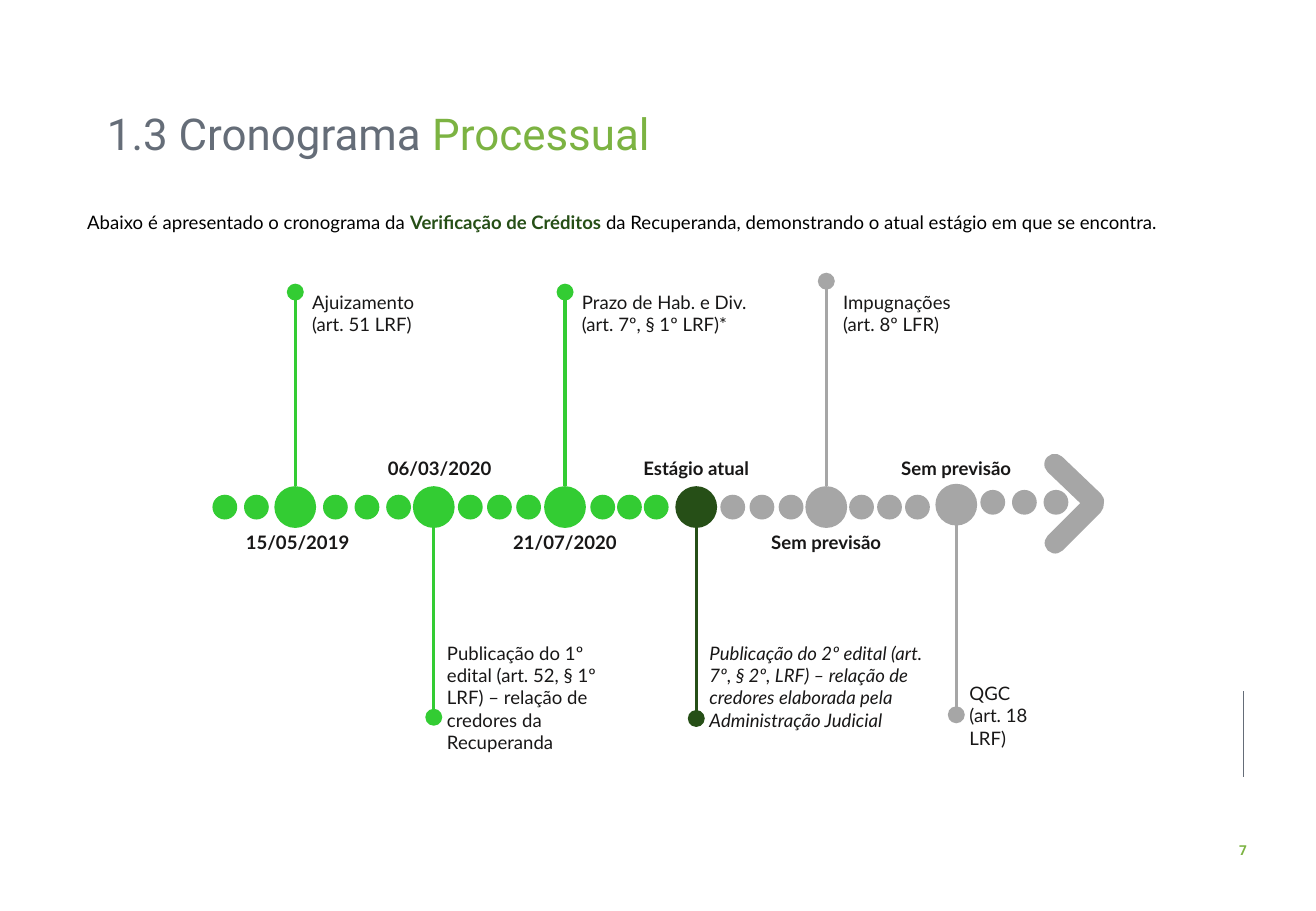
from dataclasses import dataclass

from lxml.etree import SubElement
from pptx import Presentation
from pptx.dml.color import RGBColor
from pptx.enum.shapes import MSO_CONNECTOR, MSO_SHAPE
from pptx.enum.text import MSO_ANCHOR, MSO_AUTO_SIZE, PP_ALIGN
from pptx.oxml.ns import qn
from pptx.util import Inches, Pt


@dataclass(frozen=True)
class Theme:
    slate: str = "656D78"
    lime: str = "7CB342"
    done: str = "33CC33"
    current: str = "264F17"
    pending: str = "A6A6A6"
    ink: str = "181717"
    black: str = "000000"
    heading_font: str = "Roboto"
    body_font: str = "Lato"
    title_size: float = 26
    body_size: float = 11
    number_size: float = 8.1


THEME = Theme()


@dataclass(frozen=True)
class Box:
    left: float
    top: float
    width: float
    height: float

    def lengths(self):
        return [Inches(n) for n in (self.left, self.top, self.width, self.height)]


@dataclass(frozen=True)
class Milestone:
    """Positions are inches from the left end and from the axis of the timeline."""
    x: float
    color: str
    date: str
    label: tuple
    tip: float
    label_top: float
    label_width: float
    date_shift: float = 0
    rise: float = 0
    italic: bool = False


MILESTONES = (
    Milestone(0.68, THEME.done, "15/05/2019", ("Ajuizamento (art. 51 LRF)",),
              -1.77, -1.83, 1.12, date_shift=0.02),
    Milestone(1.82, THEME.done, "06/03/2020",
              ("Publicação do 1º edital (art. 52, § 1º LRF) – relação de credores da Recuperanda",),
              1.73, 1.06, 1.68, date_shift=0.05),
    Milestone(2.9, THEME.done, "21/07/2020", ("Prazo de Hab. e Div. (art. 7º, § 1º LRF)*",),
              -1.77, -1.83, 1.62),
    Milestone(3.98, THEME.current, "Estágio atual",
              ("Publicação do 2º edital (art. 7º, § 2º, LRF) – relação de credores "
               "elaborada pela Administração Judicial",),
              1.74, 1.06, 1.99, italic=True),
    Milestone(5.05, THEME.pending, "Sem previsão", ("Impugnações (art. 8º LFR)",),
              -1.86, -1.83, 1.26),
    Milestone(6.12, THEME.pending, "Sem previsão", ("QGC", "(art. 18 LRF)"),
              1.71, 1.39, 0.93, rise=0.02),
)

# First dot centre, pitch, rise above the axis and colour; three dots unless counted
DOT_RUNS = (
    (0.1, 0.26, 0, THEME.done, 2),
    (1.01, 0.26, 0, THEME.done, 3),
    (2.12, 0.24, 0, THEME.done, 3),
    (3.21, 0.22, 0, THEME.done, 3),
    (4.28, 0.24, 0, THEME.pending, 3),
    (5.34, 0.23, 0, THEME.pending, 3),
    (6.42, 0.26, 0.04, THEME.pending, 3),
)


def add_span(para, text, color, size=THEME.body_size, font=THEME.body_font,
             bold=False, italic=False):
    span = para.add_run()
    span.text = text
    span.font.name = font
    span.font.size = Pt(size)
    span.font.bold = bold
    span.font.italic = italic
    span.font.color.rgb = RGBColor.from_string(color)


def add_frame(slide, box):
    frame = slide.shapes.add_textbox(*box.lengths()).text_frame
    frame.word_wrap = True
    return frame


def add_line(slide, start, end, color, width, ball=False):
    """Draw a straight line, with a round ball at its end if asked."""
    points = [Inches(n) for n in (*start, *end)]
    line = slide.shapes.add_connector(MSO_CONNECTOR.STRAIGHT, *points)
    line.line.color.rgb = RGBColor.from_string(color)
    line.line.width = Pt(width)
    if ball:
        SubElement(line.line._get_or_add_ln(), qn("a:tailEnd"), type="oval", w="lg", len="lg")
    SubElement(line._element.spPr, qn("a:effectLst"))


def add_solid(slide, kind, x, y, width, height, color):
    """Draw a filled shape centred on x, y."""
    box = Box(x - width / 2, y - height / 2, width, height)
    shape = slide.shapes.add_shape(kind, *box.lengths())
    shape.shadow.inherit = False
    shape.fill.solid()
    shape.fill.fore_color.rgb = RGBColor.from_string(color)
    shape.line.color.rgb = RGBColor.from_string(color)
    shape.line.width = Pt(1)
    return shape


def add_title(slide, box):
    title = slide.shapes.title
    title.left, title.top, title.width, title.height = box.lengths()
    frame = title.text_frame
    frame.auto_size = MSO_AUTO_SIZE.NONE
    frame.vertical_anchor = MSO_ANCHOR.MIDDLE
    para = frame.paragraphs[0]
    para.alignment = PP_ALIGN.LEFT
    para.line_spacing = 0.9
    for text, color in (("1.3 Cronograma ", THEME.slate), ("Processual", THEME.lime)):
        add_span(para, text, color, THEME.title_size, THEME.heading_font)


def add_introduction(slide, box):
    para = add_frame(slide, box).paragraphs[0]
    para.alignment = PP_ALIGN.JUSTIFY
    para.line_spacing = 1.14
    para._p.get_or_add_pPr().set("indent", str(Inches(0.31)))
    add_span(para, "Abaixo é apresentado o cronograma da ", THEME.black)
    add_span(para, "Verificação de Créditos ", THEME.current, bold=True)
    add_span(para, "da Recuperanda, demonstrando o atual estágio em que se encontra.", THEME.black)


def add_milestone(slide, milestone, x, axis):
    above = milestone.tip < 0
    edge = axis - 0.17 if above else axis + 0.14
    add_line(slide, (x, edge), (x, axis + milestone.tip), milestone.color, 2, ball=True)
    add_solid(slide, MSO_SHAPE.OVAL, x, axis - milestone.rise, 0.33, 0.33, milestone.color)

    date_top = axis + (0.15 if above else -0.46)
    date_box = Box(x + milestone.date_shift - 0.65, date_top, 1.3, 0.29)
    para = add_frame(slide, date_box).paragraphs[0]
    para.alignment = PP_ALIGN.CENTER
    add_span(para, milestone.date, THEME.ink, bold=True)

    label_box = Box(x + (0.04 if above else 0.01), axis + milestone.label_top,
                    milestone.label_width, 0.47 if above else 0.84)
    frame = add_frame(slide, label_box)
    for index, text in enumerate(milestone.label):
        para = frame.add_paragraph() if index else frame.paragraphs[0]
        add_span(para, text, THEME.ink, italic=milestone.italic)


def add_timeline(slide, box):
    axis = box.top + box.height / 2
    for first, pitch, rise, color, count in DOT_RUNS:
        for index in range(count):
            x = box.left + first + index * pitch
            add_solid(slide, MSO_SHAPE.OVAL, x, axis - rise, 0.19, 0.19, color)
    for offset, angle in ((-0.2, 43.7), (0.14, -45)):
        arm = add_solid(slide, MSO_SHAPE.ROUNDED_RECTANGLE, box.left + box.width - 0.25,
                        axis + offset, 0.6, 0.16, THEME.pending)
        arm.adjustments[0] = 0.5
        arm.rotation = angle
    for milestone in MILESTONES:
        add_milestone(slide, milestone, box.left + milestone.x, axis)


def add_page_mark(slide, box):
    middle = box.left + box.width / 2
    add_line(slide, (middle, box.top), (middle, box.top + 0.71), THEME.slate, 0.5)
    number_box = Box(box.left, box.top + box.height - 0.24, box.width, 0.24)
    para = add_frame(slide, number_box).paragraphs[0]
    para.alignment = PP_ALIGN.CENTER
    add_span(para, "7", THEME.lime, THEME.number_size, THEME.heading_font, bold=True)


def main():
    deck = Presentation()
    deck.slide_width, deck.slide_height = Inches(10.83), Inches(7.5)
    page = deck.slides.add_slide(deck.slide_layouts[5])
    add_title(page, Box(0.78, 0.86, 8.18, 0.53))
    add_introduction(page, Box(0.31, 1.66, 10.17, 0.3))
    add_timeline(page, Box(1.75, 2.32, 7.34, 3.71))
    add_page_mark(page, Box(10.06, 5.69, 0.34, 1.43))
    deck.save("out.pptx")


if __name__ == "__main__":
    main()
